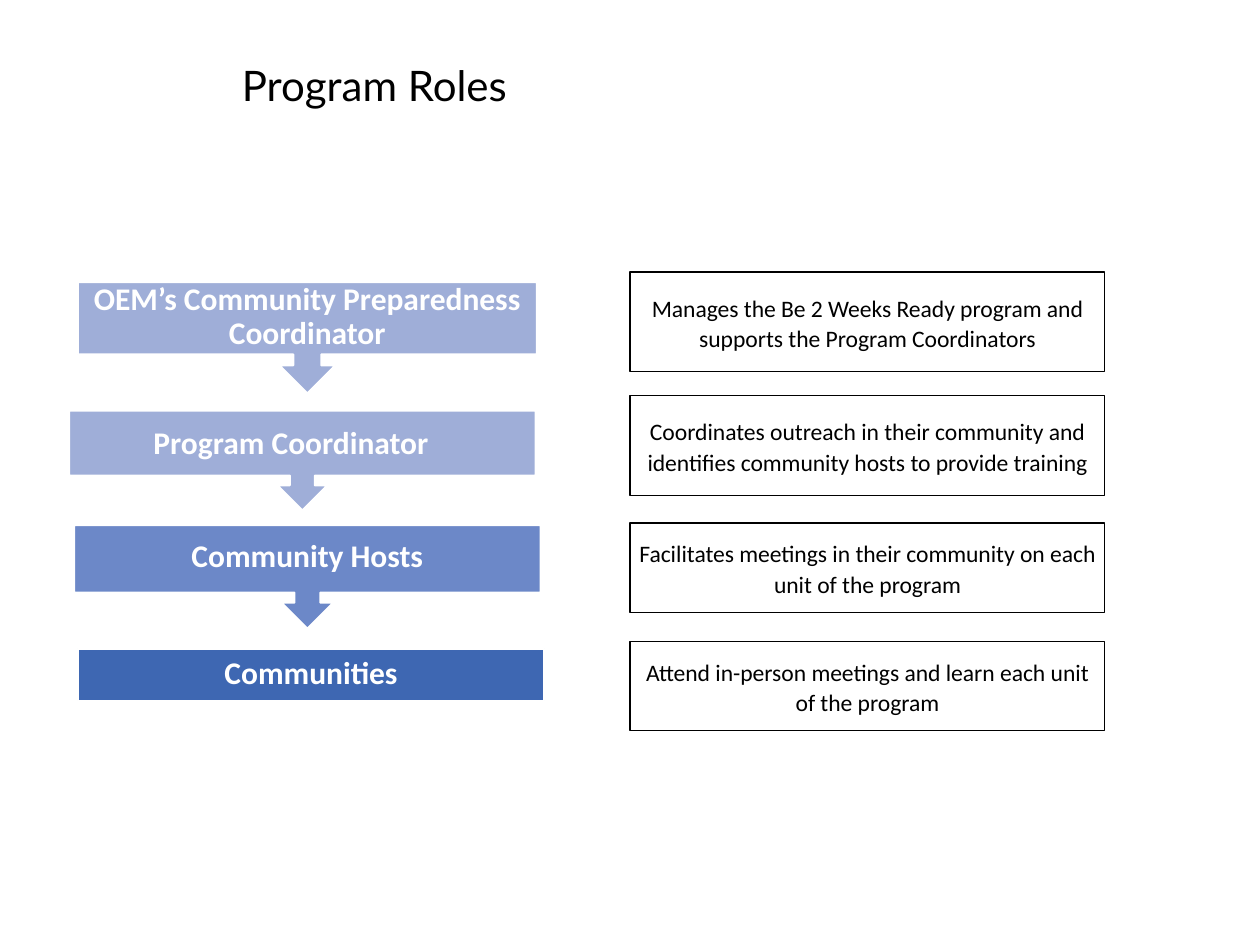
"""Build the Program Roles slide: a chain of roles beside their duties."""
import pptx
import pptx.dml.color
import pptx.enum.shapes
import pptx.enum.text
import pptx.util

Pt = pptx.util.Pt
Shape = pptx.enum.shapes.MSO_SHAPE
Align = pptx.enum.text.PP_ALIGN
Anchor = pptx.enum.text.MSO_ANCHOR

TITLE = "Program Roles"
ROLES = [
    {"label": "OEM’s Community Preparedness Coordinator", "fill": "9FAED8",
     "shape": (44.6, 161.3, 262.1, 63.4), "text": (44.6, 160.6, 262.1, 41)},
    {"label": "Program Coordinator", "fill": "9FAED8",
     "shape": (39.6, 234.7, 266.4, 56.9), "text": (33.1, 235.4, 266.4, 36.7)},
    {"label": "Community Hosts", "fill": "6C88C8",
     "shape": (42.5, 300.2, 266.4, 59), "text": (42.5, 298.8, 266.4, 38.9)},
    {"label": "Communities", "fill": "3E67B2",
     "shape": (44.6, 370.8, 266.4, 29.5), "text": (44.6, 370.8, 266.4, 29.5)},
]
DUTIES = [
    ("Manages the Be 2 Weeks Ready program and supports the Program Coordinators", 155.5, 56.9),
    ("Coordinates outreach in their community and identifies community hosts to provide training",
     226.1, 56.9),
    ("Facilitates meetings in their community on each unit of the program", 298.8, 51.1),
    ("Attend in-person meetings and learn each unit of the program", 366.5, 51.1),
]
DUTY_LEFT, DUTY_WIDTH = 360, 271.4


def color(value):
    return pptx.dml.color.RGBColor.from_string(value)


def write(box, text, size, font="Calibri", ink="000000", bold=False, align=Align.CENTER,
          anchor=Anchor.MIDDLE, spacing=0.9, after=0, margins=(7.2, 3.6)):
    frame = box.text_frame
    frame.word_wrap = True
    frame.auto_size = pptx.enum.text.MSO_AUTO_SIZE.NONE
    frame.vertical_anchor = anchor
    frame.margin_left = frame.margin_right = Pt(margins[0])
    frame.margin_top = frame.margin_bottom = Pt(margins[1])
    para = frame.paragraphs[0]
    para.alignment = align
    para.line_spacing = spacing
    para.space_after = Pt(after)
    span = para.add_run()
    span.text = text
    span.font.name = font
    span.font.size = Pt(size)
    span.font.bold = bold
    span.font.color.rgb = color(ink)


def add_block(page, kind, place, fill, line, weight):
    block = page.shapes.add_shape(kind, *map(Pt, place))
    block.shadow.inherit = False
    block.fill.solid()
    block.fill.fore_color.rgb = color(fill)
    block.line.color.rgb = color(line)
    block.line.width = Pt(weight)
    return block


def main():
    deck = pptx.Presentation()
    deck.slide_width, deck.slide_height = Pt(720), Pt(540)
    page = deck.slides.add_slide(deck.slide_layouts[5])

    title = page.shapes.title
    title.left, title.top, title.width, title.height = map(Pt, (131, 23.8, 558.7, 43.2))
    write(title, TITLE, 24, font="Lato", align=Align.LEFT, anchor=Anchor.BOTTOM)

    for role in ROLES:
        kind = Shape.RECTANGLE if role is ROLES[-1] else Shape.DOWN_ARROW_CALLOUT
        add_block(page, kind, role["shape"], role["fill"], "FFFFFF", 1)
        label = page.shapes.add_textbox(*map(Pt, role["text"]))
        write(label, role["label"], 18, ink="FFFFFF", bold=True, after=6.3, margins=(6.5, 6.5))

    for duty, top, height in DUTIES:
        place = (DUTY_LEFT, top, DUTY_WIDTH, height)
        box = add_block(page, Shape.RECTANGLE, place, "FFFFFF", "000000", 0.75)
        write(box, duty, 13.5, spacing=1.07, after=6, margins=(5, 2.9))

    deck.save("out.pptx")


if __name__ == "__main__":
    main()
